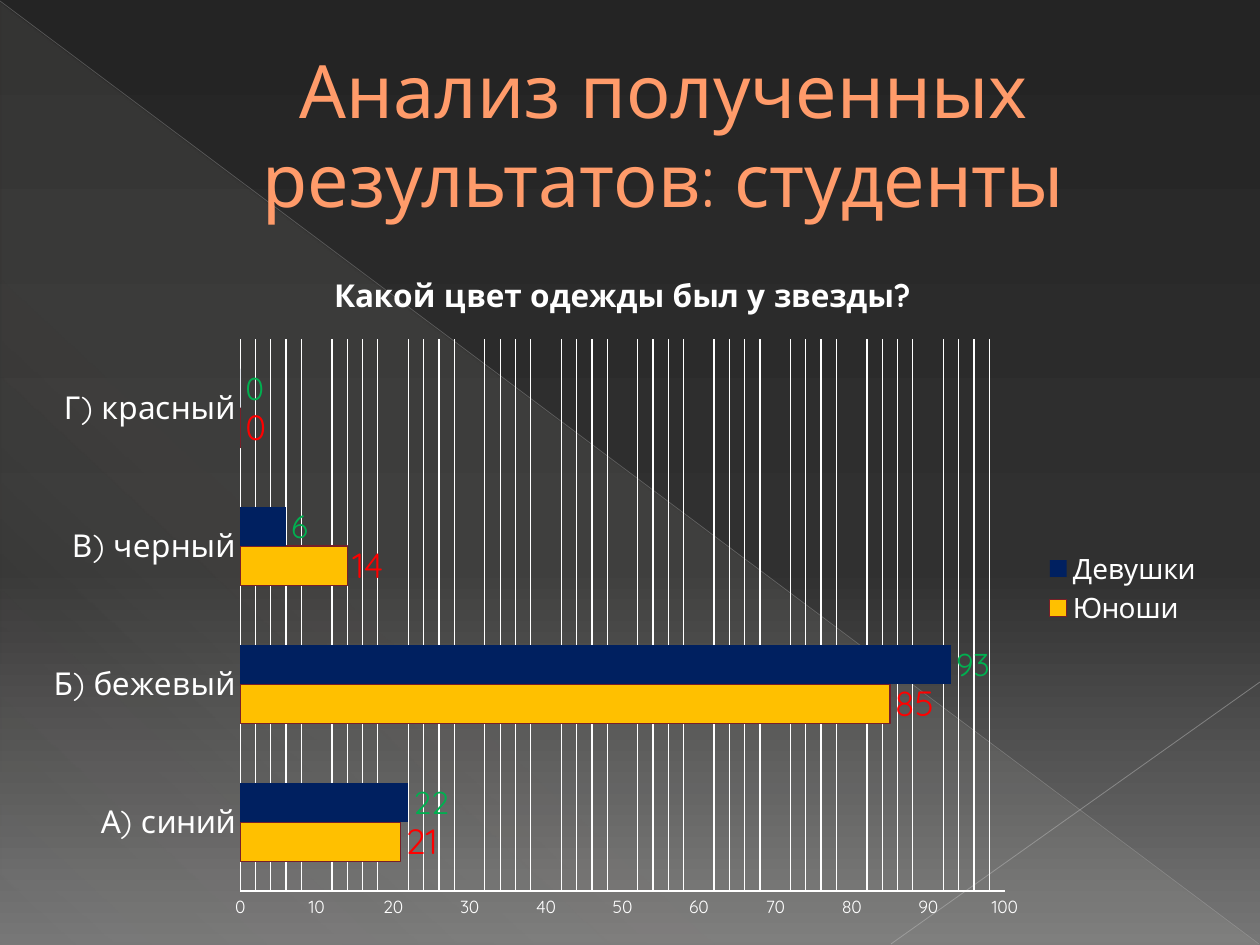
from lxml import etree
from pptx import Presentation
from pptx import util as u
from pptx.chart.data import CategoryChartData
from pptx.dml.color import RGBColor
from pptx.enum import chart as c, shapes, text
from pptx.oxml import parse_xml
from pptx.oxml.ns import nsdecls, qn

# Content
TITLE = "Анализ полученных результатов: студенты"
QUESTION = "Какой цвет одежды был у звезды?"
ANSWERS = ["А) синий", "Б) бежевый", "В) черный", "Г) красный"]
SERIES = [
    {"name": "Юноши", "values": [21, 85, 14, 0], "fill": "boys",
     "edge": "maroon", "label": "red", "size": 20},
    {"name": "Девушки", "values": [22, 93, 6, 0], "fill": "girls",
     "edge": None, "label": "green", "size": 18},
]

# Format values
FONT = "Quicksand"
COLORS = {
    "white": "FFFFFF", "title": "FF9B6A", "title_edge": "A65806",
    "boys": "FFC000", "girls": "002060", "maroon": "771F28",
    "red": "FF0000", "green": "00B050",
    "long_line": "B6B6B6", "short_line": "BFBFBF",
    "dark": "242424", "middle": "303030", "light": "767676", "sand": "E3DED1",
}
# Gradient stops: position %, colour, opacity %
BACKDROP = [(0, "dark", 100), (60, "middle", 100), (100, "light", 100)]
SHEEN = [(0, "sand", 10), (70, "sand", 8), (100, "sand", 1)]
# Diagonals: start, end, colour, width, opacity %
DIAGONALS = [
    ((0, 1), (1259, 944), "long_line", 0.39, 35),
    ((1260, 682), (891, 944), "short_line", 0.47, 45),
]

# Boxes in px: left, top, width, height
TRIANGLE = (1, 3, 1258, 942)
TITLE_BOX = (63, 37, 1134, 193)
CHART_BOX = (29, 246, 1187, 685)
PLOT_BOX = (240, 339, 764, 552)
SCALE = 914400 / 126


def px(*lengths):
    return [u.Emu(round(length * SCALE)) for length in lengths]


def rgb(name):
    return RGBColor.from_string(COLORS[name])


def style(font, size, color="white", bold=False):
    values = {"size": u.Pt(size), "name": FONT, "bold": bold}
    for key, value in values.items():
        setattr(font, key, value)
    font.color.rgb = rgb(color)


def line_xml(color, width):
    return parse_xml(
        f'<a:ln {nsdecls("a")} w="{u.Pt(width)}"><a:solidFill>'
        f'<a:srgbClr val="{COLORS[color]}"/></a:solidFill></a:ln>')


def set_gradient(fill, owner, stops, angle):
    fill.solid()
    stop_xml = "".join(
        f'<a:gs pos="{place * 1000}"><a:srgbClr val="{COLORS[color]}">'
        f'<a:alpha val="{opacity * 1000}"/></a:srgbClr></a:gs>'
        for place, color, opacity in stops)
    gradient = parse_xml(
        f'<a:gradFill {nsdecls("a")} rotWithShape="1"><a:gsLst>{stop_xml}</a:gsLst>'
        f'<a:lin ang="{angle * 60000}" scaled="0"/></a:gradFill>')
    solid = next(owner.iter(qn("a:solidFill")))
    solid.getparent().replace(solid, gradient)


def draw_line(line, color, width=0.75):
    line.color.rgb = rgb(color)
    line.width = u.Pt(width)


deck = Presentation()
deck.slide_width, deck.slide_height = px(1260, 945)
page = deck.slides.add_slide(deck.slide_layouts[6])

# Backdrop
set_gradient(page.background.fill, page.element, BACKDROP, 90) if hasattr(page, "element") \
    else set_gradient(page.background.fill, page._element, BACKDROP, 90)
triangle = page.shapes.add_shape(shapes.MSO_SHAPE.RIGHT_TRIANGLE, *px(*TRIANGLE))
triangle.shadow.inherit = False
triangle.line.fill.background()
set_gradient(triangle.fill, triangle.element, SHEEN, 133)
for start, end, color, width, opacity in DIAGONALS:
    diagonal = page.shapes.add_connector(
        shapes.MSO_CONNECTOR.STRAIGHT, *px(*start, *end))
    draw_line(diagonal.line, color, width)
    properties = diagonal.element.spPr
    tint = next(properties.iter(qn("a:srgbClr")))
    etree.SubElement(tint, qn("a:alpha"), val=str(opacity * 1000))
    etree.SubElement(properties, qn("a:effectLst"))

# Title
box = page.shapes.add_textbox(*px(*TITLE_BOX))
box.text_frame.word_wrap = True
box.text_frame.vertical_anchor = text.MSO_ANCHOR.MIDDLE
para = box.text_frame.paragraphs[0]
para.alignment = text.PP_ALIGN.CENTER
para._p.get_or_add_pPr().set("marL", str(px(67)[0]))
span = para.add_run()
span.text = TITLE
style(span.font, 42, "title")
span._r.get_or_add_rPr().insert(0, line_xml("title_edge", 0.5))

# Chart
data = CategoryChartData()
data.categories = ANSWERS
for item in SERIES:
    data.add_series(item["name"], item["values"])
chart = page.shapes.add_chart(
    c.XL_CHART_TYPE.BAR_CLUSTERED, *px(*CHART_BOX), data).chart
style(chart.font, 10)
chart.has_title = True
heading = chart.chart_title.text_frame.paragraphs[0].add_run()
heading.text = QUESTION
style(heading.font, 18, bold=True)

chart.has_legend = True
chart.legend.position = c.XL_LEGEND_POSITION.RIGHT
chart.legend.include_in_layout = False
style(chart.legend.font, 16)

# Axes
for axis, size in ((chart.category_axis, 18), (chart.value_axis, 10)):
    axis.major_tick_mark = axis.minor_tick_mark = c.XL_TICK_MARK.NONE
    axis.has_major_gridlines = False
    style(axis.tick_labels.font, size)
    draw_line(axis.format.line, "white")
limits = {"minimum_scale": 0, "maximum_scale": 100, "major_unit": 10,
          "minor_unit": 2, "has_minor_gridlines": True}
for key, value in limits.items():
    setattr(chart.value_axis, key, value)
chart_xml = chart.plots[0]._element.getroottree().getroot()
gridlines = next(chart_xml.iter(qn("c:minorGridlines")))
etree.SubElement(gridlines, qn("c:spPr")).append(line_xml("white", 0.75))

# Bars
plot = chart.plots[0]
plot.gap_width, plot.overlap, plot.vary_by_categories = 150, 0, False
for item, series in zip(SERIES, plot.series):
    series.format.fill.solid()
    series.format.fill.fore_color.rgb = rgb(item["fill"])
    if item["edge"]:
        draw_line(series.format.line, item["edge"])
    labels = series.data_labels
    labels.show_value = True
    labels.position = c.XL_LABEL_POSITION.OUTSIDE_END
    style(labels.font, item["size"], item["label"])

# Plot area as fractions of the chart box
left, top, width, height = CHART_BOX
fractions = {"x": (PLOT_BOX[0] - left) / width, "y": (PLOT_BOX[1] - top) / height,
             "w": PLOT_BOX[2] / width, "h": PLOT_BOX[3] / height}
layout_xml = "".join(f'<c:{key}Mode val="edge"/>' for key in "xy")
layout_xml += "".join(f'<c:{key} val="{part:.3f}"/>' for key, part in fractions.items())
area = next(chart_xml.iter(qn("c:plotArea")))
for old in area.findall(qn("c:layout")):
    area.remove(old)
area.insert(0, parse_xml(
    f'<c:layout {nsdecls("c")}><c:manualLayout><c:layoutTarget val="inner"/>'
    f'{layout_xml}</c:manualLayout></c:layout>'))

deck.save("out.pptx")
